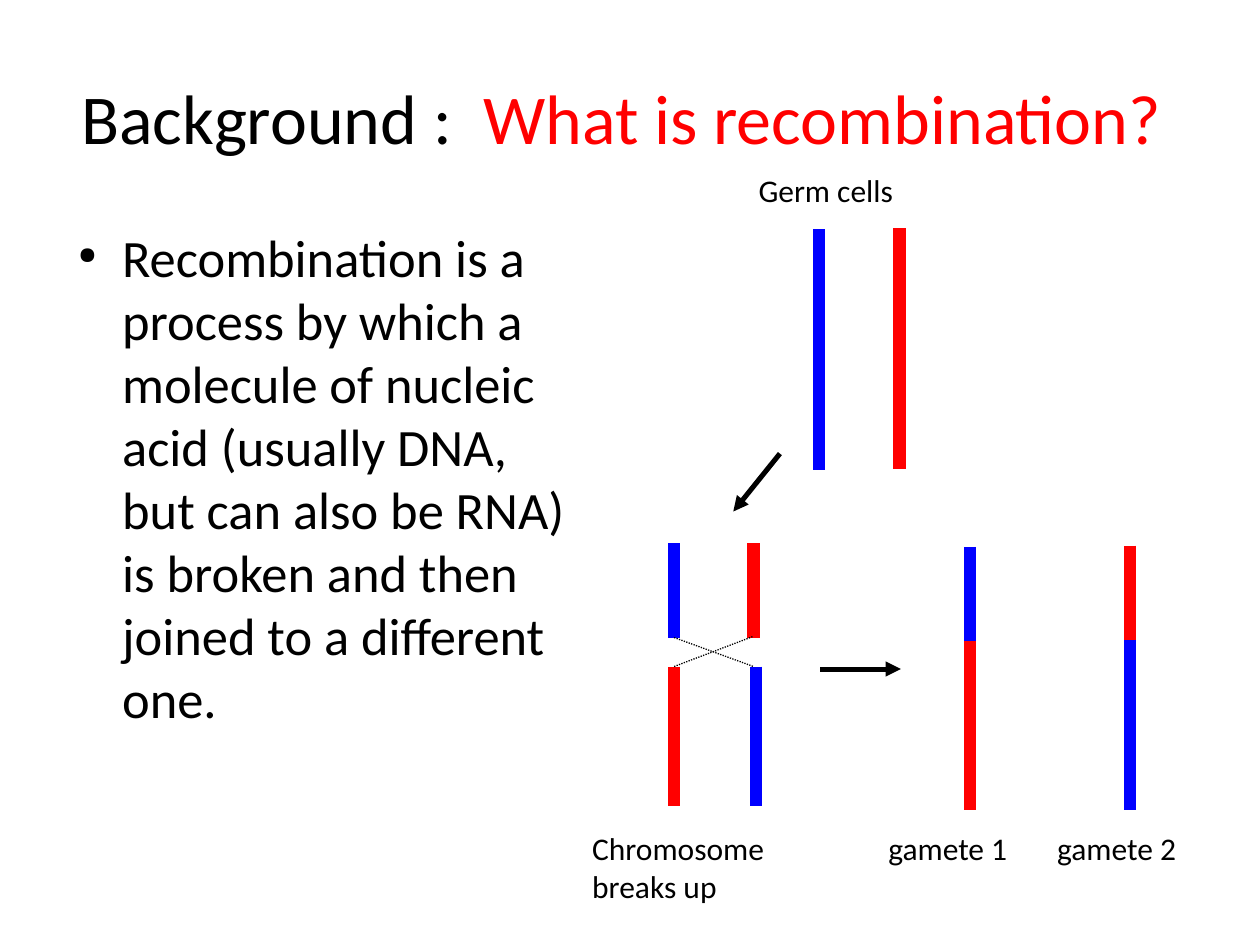
from dataclasses import dataclass
from typing import Optional

from lxml.etree import SubElement as Sub
from pptx import Presentation
from pptx.dml.color import RGBColor as RGB
from pptx.enum.dml import MSO_LINE as Dash
from pptx.enum.shapes import MSO_CONNECTOR as Conn
from pptx.enum.text import MSO_ANCHOR as Anchor, PP_ALIGN as Align
from pptx.oxml.ns import qn
from pptx.util import Inches, Pt


@dataclass(frozen=True)
class Theme:
    font: str = "Calibri"
    black: str = "000000"
    red: str = "FF0000"
    blue: str = "0000FF"
    title: float = 40
    body: float = 30
    label: float = 18
    bar: float = 7.2
    arrow: float = 2.89
    thread: float = 0.75


@dataclass(frozen=True)
class Line:
    x1: float
    y1: float
    x2: float
    y2: float
    color: str
    width: float
    dash: Optional[Dash] = None
    head: bool = False


@dataclass(frozen=True)
class Box:
    left: float
    top: float
    width: float
    height: float
    size: float
    runs: tuple
    pad: tuple = (0.09, 0.04, 0.09, 0.04)
    anchor: Anchor = Anchor.TOP
    align: Align = Align.LEFT


T = Theme()


def bar(x: float, top: float, end: float, color: str) -> Line:
    return Line(x, top, x, end, color, T.bar)


def label(text: str, left: float, top: float, width: float, height: float = 0.34) -> Box:
    return Box(left, top, width, height, T.label, ((text, T.black),))


def draw_line(slide, line: Line) -> None:
    ends = map(Inches, (line.x1, line.y1, line.x2, line.y2))
    shape = slide.shapes.add_connector(Conn.STRAIGHT, *ends)
    pen = shape.line
    pen.color.rgb = RGB.from_string(line.color)
    pen.width = Pt(line.width)
    if line.dash:
        pen.dash_style = line.dash
    if line.head:
        Sub(pen._get_or_add_ln(), qn("a:tailEnd"), type="triangle")
    Sub(shape._element.spPr, qn("a:effectLst"))


def draw_box(slide, box: Box):
    area = map(Inches, (box.left, box.top, box.width, box.height))
    frame = slide.shapes.add_textbox(*area).text_frame
    sides = ("margin_left", "margin_top", "margin_right", "margin_bottom")
    form = dict(zip(sides, map(Inches, box.pad)))
    form |= {"word_wrap": True, "vertical_anchor": box.anchor}
    for name, value in form.items():
        setattr(frame, name, value)
    para = frame.paragraphs[0]
    para.alignment = box.align
    for text, color in box.runs:
        run = para.add_run()
        run.text = text
        for name, value in {"name": T.font, "size": Pt(box.size)}.items():
            setattr(run.font, name, value)
        run.font.color.rgb = RGB.from_string(color)
    return para


def add_bullet(para) -> None:
    para.space_after = Pt(12.9)
    props = para._p.get_or_add_pPr()
    for name, value in {"marL": 0.47, "indent": -0.35}.items():
        props.set(name, str(Inches(value)))
    Sub(props, qn("a:buSzPct"), val="45000")
    Sub(props, qn("a:buChar"), char="●")


TITLE = Box(0.43, 0.28, 9, 1.25, T.title,
            (("Background :  ", T.black), ("What is recombination?", T.red)),
            (0, 0.04, 0, 0), Anchor.MIDDLE, Align.CENTER)
BODY = Box(0.5, 1.76, 4.03, 4.82, T.body,
           (("Recombination is a process by which a molecule of nucleic acid "
             "(usually DNA, but can also be RNA) is broken and then joined "
             "to a different one.", T.black),),
           (0, 0.03, 0, 0))

LABELS = (
    label("gamete 1", 6.96, 6.54, 1.42),
    label("gamete 2", 8.3, 6.54, 1.38),
    label("Chromosome breaks up", 4.61, 6.54, 1.91, 0.59),
    label("Germ cells", 5.93, 1.32, 1.62),
)

LINES = (
    # Germ cells: two whole chromosomes
    bar(6.5, 1.82, 3.73, T.blue),
    bar(7.14, 1.81, 3.72, T.red),
    # Broken chromosomes
    bar(5.35, 4.31, 5.06, T.blue),
    bar(5.98, 4.31, 5.06, T.red),
    bar(6, 5.29, 6.4, T.blue),
    bar(5.35, 5.29, 6.4, T.red),
    # Gametes
    bar(7.7, 4.34, 5.09, T.blue),
    bar(7.7, 5.09, 6.43, T.red),
    bar(8.97, 4.33, 5.08, T.red),
    bar(8.97, 5.08, 6.43, T.blue),
    # Steps
    Line(6.19, 3.6, 5.82, 4.06, T.black, T.arrow, head=True),
    Line(6.51, 5.31, 7.15, 5.31, T.black, T.arrow, head=True),
    # Crossing threads
    Line(5.35, 5.29, 5.98, 5.05, T.black, T.thread, Dash.ROUND_DOT),
    Line(5.35, 5.06, 5.98, 5.29, T.black, T.thread, Dash.ROUND_DOT),
)


def main() -> None:
    deck = Presentation()
    deck.slide_width, deck.slide_height = Inches(10), Inches(7.5)
    slide = deck.slides.add_slide(deck.slide_layouts[6])
    draw_box(slide, TITLE)
    add_bullet(draw_box(slide, BODY))
    for line in LINES:
        draw_line(slide, line)
    for box in LABELS:
        draw_box(slide, box)
    deck.save("out.pptx")


if __name__ == "__main__":
    main()
